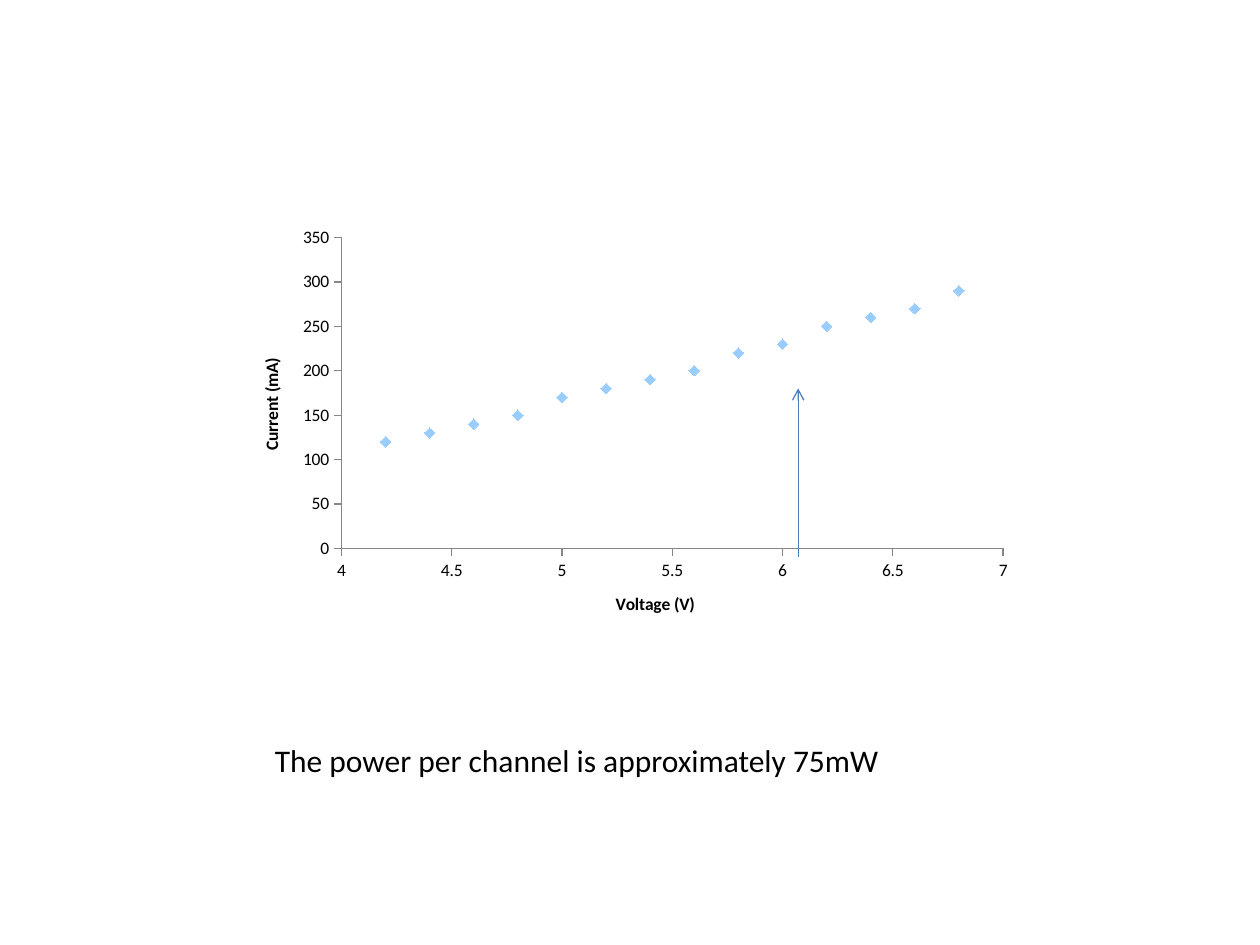
from dataclasses import dataclass

from lxml.etree import SubElement
from pptx import Presentation
from pptx.chart.data import XyChartData
from pptx.dml.color import RGBColor
from pptx.enum.chart import XL_CHART_TYPE, XL_MARKER_STYLE, XL_TICK_MARK
from pptx.enum.shapes import MSO_CONNECTOR
from pptx.enum.text import MSO_AUTO_SIZE
from pptx.oxml.ns import qn
from pptx.util import Cm, Pt


@dataclass(frozen=True)
class Theme:
    font: str = "Calibri"
    ink: RGBColor = RGBColor(0x00, 0x00, 0x00)
    axis: RGBColor = RGBColor(0x86, 0x86, 0x86)
    marker: RGBColor = RGBColor(0x99, 0xCC, 0xFF)
    arrow: RGBColor = RGBColor(0x4B, 0x7E, 0xBC)
    chart_size: int = 10
    body_size: int = 18


def write_text(frame, text, *, theme, size, bold=False):
    frame.text = text
    font = frame.paragraphs[0].runs[0].font
    font.name, font.size, font.bold = theme.font, Pt(size), bold
    font.color.rgb = theme.ink


class SlideBuilder:
    def __init__(self, slide, theme):
        self.slide = slide
        self.theme = theme

    def scatter(self, left, top, width, height, points, plot_area):
        """Draw points as markers; plot_area gives x, y, w, h as chart fractions."""
        chart_data = XyChartData()
        measurements = chart_data.add_series("Series 1")
        for voltage, current in points:
            measurements.add_data_point(voltage, current)
        chart = self.slide.shapes.add_chart(
            XL_CHART_TYPE.XY_SCATTER, Cm(left), Cm(top), Cm(width), Cm(height), chart_data
        ).chart
        chart.has_legend = False
        chart.has_title = False
        chart.font.name = self.theme.font
        chart.font.size = Pt(self.theme.chart_size)
        chart.font.color.rgb = self.theme.ink

        plot = chart.plots[0]
        plot.vary_by_categories = False
        series = plot.series[0]
        series.smooth = False
        series.format.line.fill.background()
        series.marker.style = XL_MARKER_STYLE.DIAMOND
        series.marker.size = 6
        series.marker.format.fill.solid()
        series.marker.format.fill.fore_color.rgb = self.theme.marker
        series.marker.format.line.fill.background()
        self.place_plot(chart, plot_area)
        return chart

    def place_plot(self, chart, plot_area):
        plot_xml = chart.plots[0]._element.getparent()
        for old_layout in plot_xml.findall(qn("c:layout")):
            plot_xml.remove(old_layout)
        layout = SubElement(plot_xml, qn("c:layout"))
        plot_xml.insert(0, layout)
        manual = SubElement(layout, qn("c:manualLayout"))
        settings = [("layoutTarget", "inner"), ("xMode", "edge"), ("yMode", "edge")]
        settings += zip("xywh", plot_area)
        for tag, value in settings:
            SubElement(manual, qn(f"c:{tag}")).set("val", str(value))

    def axis(self, axis, title, low, high, step):
        axis.minimum_scale, axis.maximum_scale, axis.major_unit = low, high, step
        axis.has_major_gridlines = False
        axis.major_tick_mark = XL_TICK_MARK.OUTSIDE
        axis.minor_tick_mark = XL_TICK_MARK.NONE
        axis.tick_labels.number_format = "General"
        axis.tick_labels.number_format_is_linked = False
        axis.format.line.color.rgb = self.theme.axis
        axis.format.line.width = Pt(0.75)
        write_text(axis.axis_title.text_frame, title, theme=self.theme,
                   size=self.theme.chart_size, bold=True)

    def arrow(self, start_x, start_y, end_x, end_y):
        connector = self.slide.shapes.add_connector(
            MSO_CONNECTOR.STRAIGHT, Cm(start_x), Cm(start_y), Cm(end_x), Cm(end_y)
        )
        connector.line.color.rgb = self.theme.arrow
        connector.line.width = Pt(0.75)
        SubElement(connector.line._get_or_add_ln(), qn("a:tailEnd")).set("type", "arrow")
        SubElement(connector._element.spPr, qn("a:effectLst"))

    def text(self, left, top, width, height, content):
        frame = self.slide.shapes.add_textbox(
            Cm(left), Cm(top), Cm(width), Cm(height)
        ).text_frame
        frame.word_wrap = True
        frame.auto_size = MSO_AUTO_SIZE.SHAPE_TO_FIT_TEXT
        write_text(frame, content, theme=self.theme, size=self.theme.body_size)


def main():
    presentation = Presentation()
    presentation.slide_width, presentation.slide_height = Cm(25.4), Cm(19.05)
    blank_layout = presentation.slide_layouts[6]
    builder = SlideBuilder(presentation.slides.add_slide(blank_layout), Theme())

    currents = [120, 130, 140, 150, 170, 180, 190, 200, 220, 230, 250, 260, 270, 290]
    points = [(round(4.2 + 0.2 * i, 1), current) for i, current in enumerate(currents)]
    chart = builder.scatter(4.66, 4.45, 15.88, 8.47, points, (0.14, 0.04, 0.84, 0.74))
    builder.axis(chart.category_axis, "Voltage (V)", 4, 7, 0.5)
    builder.axis(chart.value_axis, "Current (mA)", 0, 350, 50)

    builder.arrow(16.09, 11.22, 16.09, 7.83)
    builder.text(5.29, 14.82, 13.55, 1.03, "The power per channel is approximately 75mW")

    presentation.save("out.pptx")


if __name__ == "__main__":
    main()
